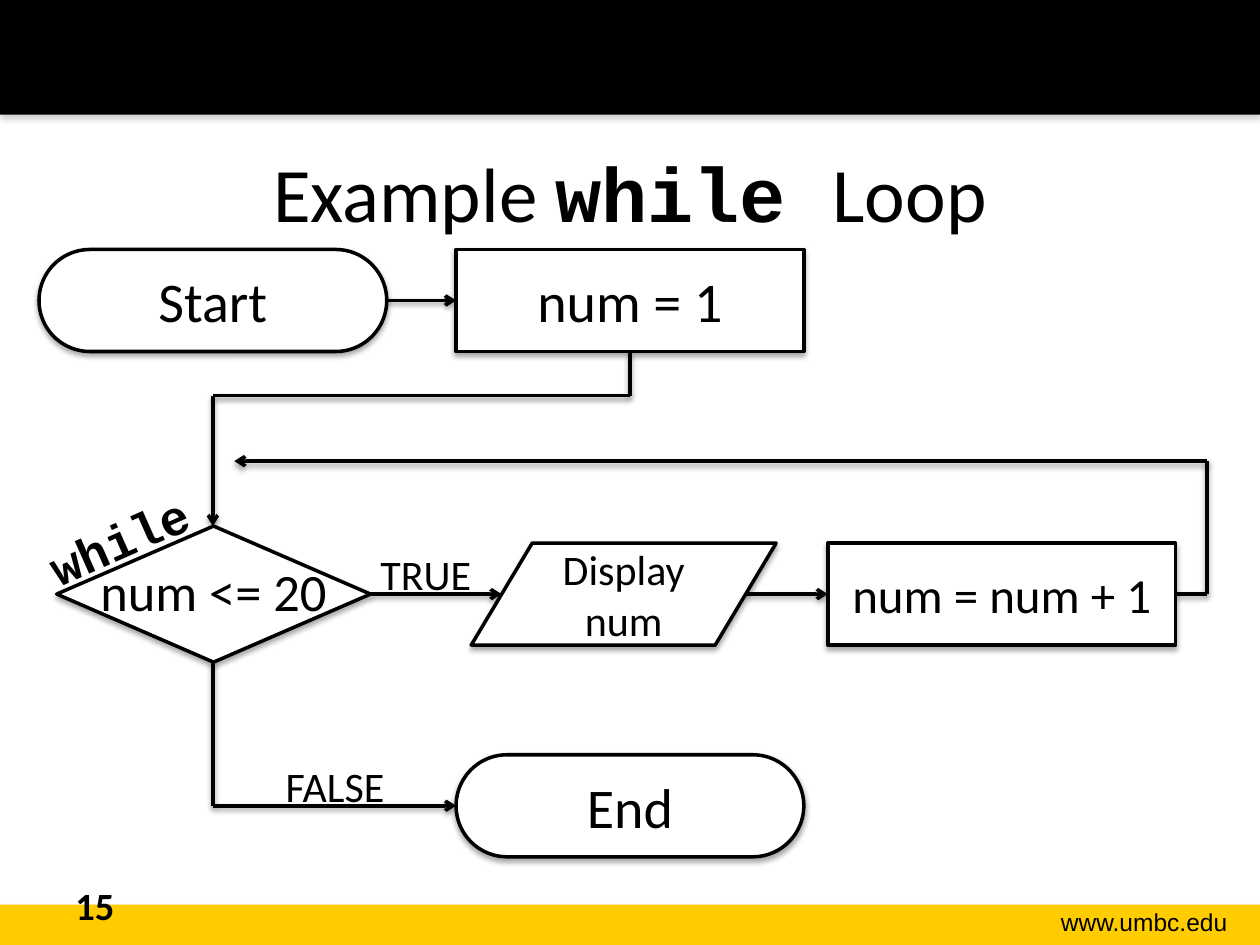
from lxml import etree
from pptx import Presentation
from pptx.dml.color import RGBColor
from pptx.enum.shapes import MSO_CONNECTOR, MSO_SHAPE
from pptx.enum.text import MSO_ANCHOR, PP_ALIGN
from pptx.oxml.ns import qn
from pptx.util import Inches, Pt

BLACK = RGBColor(0x00, 0x00, 0x00)
WHITE = RGBColor(0xFF, 0xFF, 0xFF)
GOLD = RGBColor(0xFF, 0xCC, 0x00)
GRAY = RGBColor(0x80, 0x80, 0x80)

STRAIGHT = MSO_CONNECTOR.STRAIGHT
RECT = MSO_SHAPE.RECTANGLE
TERMINAL = MSO_SHAPE.ROUNDED_RECTANGLE
DECISION = MSO_SHAPE.FLOWCHART_DECISION
DATA = MSO_SHAPE.FLOWCHART_DATA
LEFT, CENTER, RIGHT = PP_ALIGN.LEFT, PP_ALIGN.CENTER, PP_ALIGN.RIGHT
TOP, MIDDLE = MSO_ANCHOR.TOP, MSO_ANCHOR.MIDDLE

BODY, CODE, WEB = "Calibri", "Courier New", "Arial"


def add_shadow(part, color=BLACK, opacity=35, distance=1.8):
    """Drop a soft shadow straight down; call after fill and line are set."""
    effects = etree.SubElement(part._element.spPr, qn("a:effectLst"))
    shadow = etree.SubElement(
        effects, qn("a:outerShdw"), blurRad=str(Pt(3.1)),
        dist=str(Pt(distance)), dir="5400000", rotWithShape="0")
    tint = etree.SubElement(shadow, qn("a:srgbClr"), val=str(color))
    etree.SubElement(tint, qn("a:alpha"), val=str(opacity * 1000))


def style_font(font, size, name=BODY, bold=False):
    font.size, font.name, font.bold = Pt(size), name, bold
    font.color.rgb = BLACK


def add_label(slide, box, text, size, name=BODY, bold=False, align=CENTER):
    label = slide.shapes.add_textbox(*map(Inches, box))
    label.text_frame.word_wrap = True
    paragraph = label.text_frame.paragraphs[0]
    paragraph.text, paragraph.alignment = text, align
    style_font(paragraph.font, size, name, bold)
    return label


def add_bar(slide, box, color):
    bar = slide.shapes.add_shape(RECT, *map(Inches, box))
    bar.fill.solid()
    bar.fill.fore_color.rgb = color
    bar.line.fill.background()
    return bar


def add_step(slide, kind, box, text, size):
    step = slide.shapes.add_shape(kind, *map(Inches, box))
    step.fill.solid()
    step.fill.fore_color.rgb = WHITE
    step.line.color.rgb = BLACK
    step.line.width = Pt(2)
    add_shadow(step)
    if kind == TERMINAL:
        step.adjustments[0] = 0.5
    frame = step.text_frame
    frame.word_wrap = kind != DECISION
    if kind == DECISION:
        frame.margin_bottom = Inches(0.1)
    frame.vertical_anchor = MIDDLE
    paragraph = frame.paragraphs[0]
    paragraph.text, paragraph.alignment = text, CENTER
    style_font(paragraph.font, size)


def add_path(slide, points, arrow=True):
    """Join the points with straight lines, the last one ending in an arrow."""
    for start, end in zip(points, points[1:]):
        line = slide.shapes.add_connector(
            STRAIGHT, *map(Inches, (*start, *end)))
        line.line.color.rgb = BLACK
        line.line.width = Pt(2)
        if arrow and end == points[-1]:
            etree.SubElement(line.line._get_or_add_ln(), qn("a:tailEnd"),
                             type="arrow")
        add_shadow(line, opacity=38, distance=1.6)


def add_frame(slide, width, height):
    # Header and footer bars, web address and page number
    add_bar(slide, (0, height - 0.32, width, 0.32), GOLD)
    header = add_bar(slide, (0, 0, width, 0.91), BLACK)
    add_shadow(header, GRAY)
    add_label(slide, (width - 2.15, height - 0.35, 1.99, 0.34),
              "www.umbc.edu", 14, WEB, align=RIGHT)
    add_label(slide, (0.5, height - 0.55, 2.33, 0.4), "15", 22, bold=True,
              align=LEFT)


def add_title(slide, box):
    title = slide.shapes.add_textbox(*map(Inches, box))
    frame = title.text_frame
    frame.word_wrap = True
    frame.vertical_anchor = MIDDLE
    paragraph = frame.paragraphs[0]
    paragraph.alignment = CENTER
    for text, name in (("Example ", BODY), ("while ", CODE), ("Loop", BODY)):
        run = paragraph.add_run()
        run.text = text
        style_font(run.font, 44, name, bold=name == CODE)


def add_flowchart(slide, left, top):
    step_w, step_h = 2.76, 0.81
    test_w, test_h = 2.49, 1.08
    middle_x = left + 3.31
    update_x = left + 6.26
    test_x = left + 0.14
    axis_x = left + 1.38
    loop_y = top + 2.33
    end_y = top + 4.01
    start_mid = top + step_h / 2
    loop_mid = loop_y + step_h / 2
    end_mid = end_y + step_h / 2
    test_top = loop_mid - test_h / 2
    init_mid_x = middle_x + step_w / 2
    turn_y = top + 1.16
    back_x, back_y = update_x + step_w + 0.25, top + 1.68

    # Arrows between steps
    add_path(slide, [(left + step_w, start_mid), (middle_x, start_mid)])
    add_path(slide, [(init_mid_x, top + step_h), (init_mid_x, turn_y),
                     (axis_x, turn_y), (axis_x, test_top)])
    add_path(slide, [(test_x + test_w, loop_mid), (3.98, loop_mid)])
    add_path(slide, [(5.92, loop_mid), (update_x, loop_mid)])
    add_path(slide, [(update_x + step_w, loop_mid), (back_x, loop_mid),
                     (back_x, back_y), (axis_x + 0.17, back_y)])
    add_path(slide, [(axis_x, test_top + test_h), (axis_x, end_mid),
                     (middle_x, end_mid)])

    # Steps
    for kind, box, text, size in (
        (TERMINAL, (left, top, step_w, step_h), "Start", 32),
        (RECT, (middle_x, top, step_w, step_h), "num = 1", 32),
        (DECISION, (test_x, test_top, test_w, test_h), "num <= 20", 30),
        (DATA, (middle_x + 0.12, loop_y, 2.42, step_h), "Display num", 24),
        (RECT, (update_x, loop_y, step_w, step_h), "num = num + 1", 28),
        (TERMINAL, (middle_x, end_y, step_w, step_h), "End", 32),
    ):
        add_step(slide, kind, box, text, size)

    # Branch labels
    add_label(slide, (left + 2.27, loop_mid - 0.41, 1.6, 0.5), "TRUE", 24)
    add_label(slide, (left + 1.55, end_mid - 0.41, 1.6, 0.5), "FALSE", 24)
    keyword = add_label(slide, (left - 0.05, top + 2.02, 1.37, 0.57),
                        "while", 28, CODE, bold=True, align=LEFT)
    keyword.rotation = 336


def main():
    width, height = 10, 7.5
    deck = Presentation()
    deck.slide_width, deck.slide_height = Inches(width), Inches(height)
    slide = deck.slides.add_slide(deck.slide_layouts[6])
    add_frame(slide, width, height)
    add_title(slide, (0.5, 0.9, 9, 1.25))
    add_flowchart(slide, 0.31, 1.98)
    deck.save("out.pptx")


if __name__ == "__main__":
    main()
